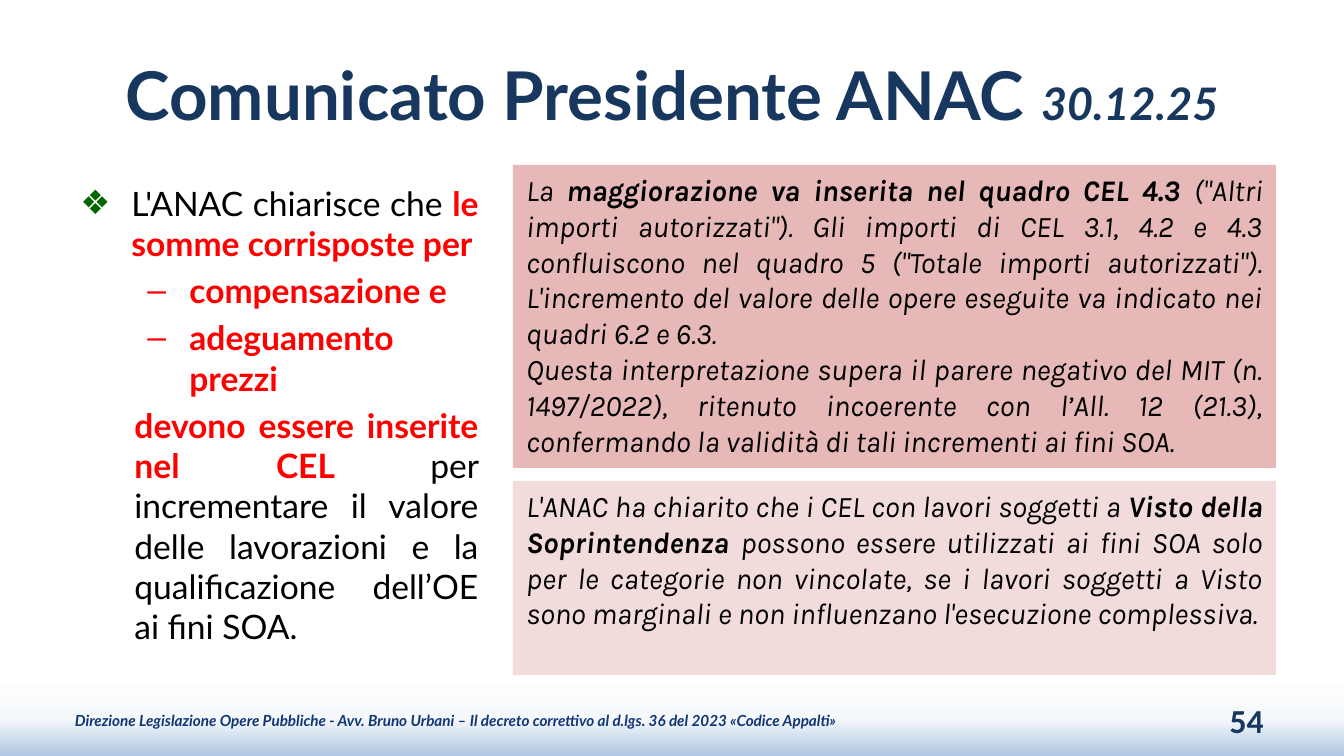
import pptx
import pptx.dml.color
import pptx.enum.shapes
import pptx.enum.text
import pptx.oxml.ns
import pptx.oxml.xmlchemy
import pptx.util

RGBColor = pptx.dml.color.RGBColor
Align = pptx.enum.text.PP_ALIGN
Anchor = pptx.enum.text.MSO_ANCHOR
OxmlElement = pptx.oxml.xmlchemy.OxmlElement
qn = pptx.oxml.ns.qn

EMU_PER_PX = 914400 / 134.4

NAVY = RGBColor(0x17, 0x37, 0x5E)
FOOTER_BLUE = RGBColor(0x10, 0x36, 0x76)
BLACK = RGBColor(0, 0, 0)
RED = RGBColor(0xFF, 0, 0)
GREEN = RGBColor(0, 0x66, 0)
ROSE = RGBColor(0xE6, 0xB9, 0xB8)
PALE_ROSE = RGBColor(0xF2, 0xDC, 0xDB)
BACKGROUND_STOPS = [
    (89, RGBColor(0xFF, 0xFF, 0xFF)),
    (95, RGBColor(0xF6, 0xF9, 0xFC)),
    (100, RGBColor(0xB0, 0xC6, 0xE1)),
]

# Body paragraphs: left margin, indent, bullet, bullet colour, spans
BODY = [
    (51, -51, "❖", GREEN, [("L'ANAC chiarisce che ", BLACK, False),
                           ("le somme corrisposte per", RED, True)]),
    (109, -42, "–", RED, [("compensazione e", RED, True)]),
    (109, -42, "–", RED, [("adeguamento prezzi", RED, True)]),
    (54, 0, None, None, [
        ("devono essere inserite nel CEL ", RED, True),
        ("per incrementare il valore delle lavorazioni e la qualificazione "
         "dell’OE ai fini SOA.", BLACK, False)]),
]

# Panel paragraphs: spans of text and bold
CEL_PANEL = [
    [("La ", False),
     ("maggiorazione va inserita nel quadro CEL 4.3 ", True),
     ("(\"Altri importi autorizzati\"). Gli importi di CEL 3.1, 4.2 e 4.3 "
      "confluiscono nel quadro 5 (\"Totale importi autorizzati\"). "
      "L'incremento del valore delle opere eseguite va indicato nei quadri "
      "6.2 e 6.3.", False)],
    [("Questa interpretazione supera il parere negativo del MIT "
      "(n. 1497/2022), ritenuto incoerente con l’All. 12 (21.3), confermando "
      "la validità di tali incrementi ai fini SOA.", False)],
]
VISTO_PANEL = [
    [("L'ANAC ha chiarito che i CEL con lavori soggetti a ", False),
     ("Visto della Soprintendenza ", True),
     ("possono essere utilizzati ai fini SOA solo per le categorie non "
      "vincolate, se i lavori soggetti a Visto sono marginali e non "
      "influenzano l'esecuzione complessiva.", False)],
]


def px(length):
    return pptx.util.Emu(round(length * EMU_PER_PX))


def place(shape, left, top, width, height):
    shape.left, shape.top = px(left), px(top)
    shape.width, shape.height = px(width), px(height)


def add_span(para, text, font, size, color, bold=False, italic=False):
    span = para.add_run()
    span.text = text
    span.font.name = font
    span.font.size = pptx.util.Pt(size)
    span.font.color.rgb = color
    span.font.bold = bold
    span.font.italic = italic


def prepare_frame(frame, anchor):
    frame.word_wrap = True
    frame.auto_size = pptx.enum.text.MSO_AUTO_SIZE.NONE
    frame.vertical_anchor = anchor


def next_paragraph(frame, index):
    return frame.paragraphs[0] if index == 0 else frame.add_paragraph()


def color_element(color):
    value = OxmlElement("a:srgbClr")
    value.set("val", str(color))
    return value


def set_bullet(para, margin, indent, bullet, color):
    """Set the indents of a paragraph and its bullet, or none."""
    properties = para._p.get_or_add_pPr()
    properties.set("marL", str(px(margin)))
    properties.set("indent", str(px(indent)))
    if bullet is None:
        properties.append(OxmlElement("a:buNone"))
        return
    bullet_color = OxmlElement("a:buClr")
    bullet_color.append(color_element(color))
    character = OxmlElement("a:buChar")
    character.set("char", bullet)
    properties.extend([bullet_color, character])


def paint_background(slide):
    fill = slide.background.fill
    fill.gradient()
    fill.gradient_angle = 270
    stops = slide.element.find(".//" + qn("a:gsLst"))
    for stop in list(stops):
        stops.remove(stop)
    for percent, color in BACKGROUND_STOPS:
        stop = OxmlElement("a:gs")
        stop.set("pos", str(percent * 1000))
        stop.append(color_element(color))
        stops.append(stop)


def fill_title(title):
    place(title, 67, 31, 1210, 126)
    prepare_frame(title.text_frame, Anchor.MIDDLE)
    para = title.text_frame.paragraphs[0]
    para.alignment = Align.CENTER
    add_span(para, "Comunicato Presidente ANAC ", "Lato", 36, NAVY, True)
    add_span(para, "30.12.25", "Lato", 24, NAVY, True, True)


def fill_body(body):
    place(body, 67, 176, 425, 499)
    prepare_frame(body.text_frame, Anchor.TOP)
    for index, (margin, indent, bullet, color, spans) in enumerate(BODY):
        para = next_paragraph(body.text_frame, index)
        para.level = 1 if index else 0
        set_bullet(para, margin, indent, bullet, color)
        para.alignment = Align.JUSTIFY
        para.space_before = pptx.util.Pt(3.6 if index else 0)
        for text, span_color, bold in spans:
            add_span(para, text, "Lato", 18, span_color, bold)


def add_panel(slide, top, height, color, paragraphs):
    panel = slide.shapes.add_shape(
        pptx.enum.shapes.MSO_SHAPE.RECTANGLE,
        px(513), px(top), px(763), px(height))
    panel.shadow.inherit = False
    panel.fill.solid()
    panel.fill.fore_color.rgb = color
    panel.line.fill.background()
    prepare_frame(panel.text_frame, Anchor.TOP)
    for index, spans in enumerate(paragraphs):
        para = next_paragraph(panel.text_frame, index)
        para.alignment = Align.JUSTIFY
        for text, bold in spans:
            add_span(para, text, "Karla", 16, BLACK, bold, True)


def add_label(slide, left, width, text, alignment, font, size, color, italic):
    box = slide.shapes.add_textbox(px(left), px(700), px(width), px(40))
    prepare_frame(box.text_frame, Anchor.MIDDLE)
    para = box.text_frame.paragraphs[0]
    para.alignment = alignment
    add_span(para, text, font, size, color, True, italic)
    return box


def main():
    deck = pptx.Presentation()
    deck.slide_width, deck.slide_height = px(1344), px(756)
    slide = deck.slides.add_slide(deck.slide_layouts[1])
    paint_background(slide)
    fill_title(slide.shapes.title)
    fill_body(slide.placeholders[1])
    add_label(slide, 964, 313, "54", Align.RIGHT, "Calibri", 18, NAVY, False)
    footer = add_label(
        slide, 66, 806,
        "Direzione Legislazione Opere Pubbliche - Avv. Bruno Urbani – "
        "Il decreto correttivo al d.lgs. 36 del 2023 «Codice Appalti»",
        Align.LEFT, "Lato", 8.2, FOOTER_BLUE, True)
    footer.text_frame.margin_left = footer.text_frame.margin_right = px(9)
    add_panel(slide, 165, 303, ROSE, CEL_PANEL)
    add_panel(slide, 481, 194, PALE_ROSE, VISTO_PANEL)
    deck.save("out.pptx")


if __name__ == "__main__":
    main()
